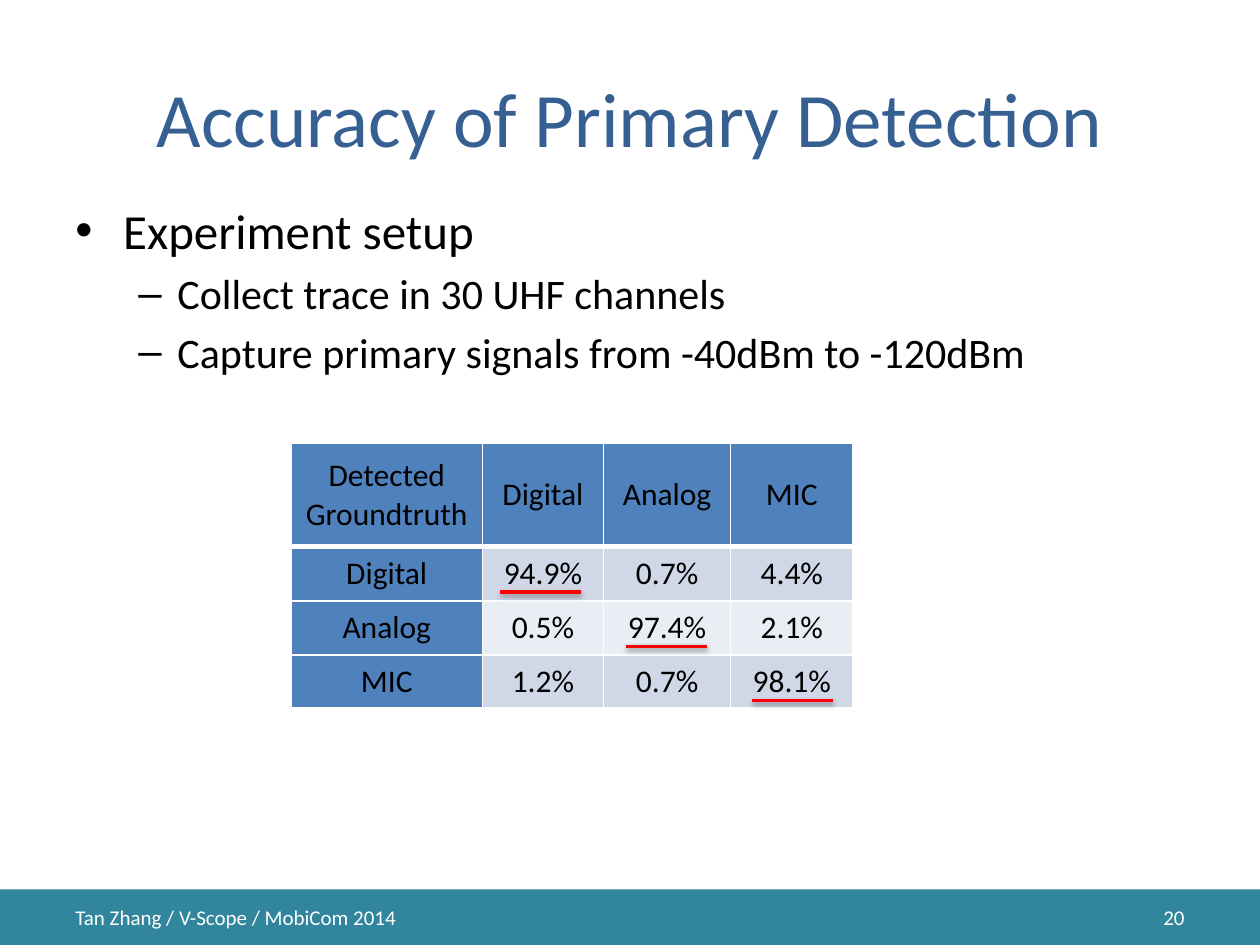
"""Build the slide on the accuracy of primary detection."""
from dataclasses import dataclass
from lxml.etree import SubElement
from pptx import Presentation
from pptx.dml.color import RGBColor
from pptx.enum.shapes import MSO_CONNECTOR, MSO_SHAPE
from pptx.enum.text import MSO_ANCHOR, PP_ALIGN
from pptx.oxml.ns import qn
from pptx.util import Inches, Pt


@dataclass(frozen=True)
class Theme:
    font: str = "Calibri"
    title: str = "376092"
    ink: str = "000000"
    white: str = "FFFFFF"
    bar: str = "31859C"
    head: str = "4F81BD"
    bands: tuple = ("D0D8E8", "E9EDF4")
    mark: str = "FF0000"
    big: int = 44
    main: int = 28
    sub: int = 24
    cell: int = 18
    small: int = 12


def add(parent, tag, **attrs):
    node = SubElement(parent, qn(tag))
    for name, value in attrs.items():
        node.set(name, str(value))
    return node


def paint(fill, color):
    fill.solid()
    fill.fore_color.rgb = RGBColor.from_string(color)


def cast(shape, alpha, dist):
    effects = add(shape._element.spPr, "a:effectLst")
    shadow = add(effects, "a:outerShdw", blurRad=Pt(3.1), dist=Pt(dist),
                 dir=5400000, rotWithShape=0)
    color = add(shadow, "a:srgbClr", val=Theme.ink)
    add(color, "a:alpha", val=alpha * 1000)


class Page:
    def __init__(self, slide, theme):
        self.slide, self.theme = slide, theme

    def style(self, para, size, color, align=PP_ALIGN.LEFT):
        para.alignment = align
        font = para.font
        font.name, font.size = self.theme.font, Pt(size)
        font.color.rgb = RGBColor.from_string(color)

    def frame(self, box, anchor):
        frame = self.slide.shapes.add_textbox(*map(Inches, box)).text_frame
        frame.word_wrap = True
        frame.vertical_anchor = anchor
        return frame

    def text(self, box, words, size, color, align=PP_ALIGN.LEFT):
        frame = self.frame(box, MSO_ANCHOR.MIDDLE)
        frame.text = words
        self.style(frame.paragraphs[0], size, color, align)

    def bullets(self, box, items):
        looks = (("•", 0.38, 0.38, self.theme.main),
                 ("–", 0.81, 0.31, self.theme.sub))
        frame = self.frame(box, MSO_ANCHOR.TOP)
        for i, (level, words) in enumerate(items):
            para = frame.add_paragraph() if i else frame.paragraphs[0]
            mark, left, hang, size = looks[level]
            para.text = words
            para.level = level
            if i:
                para.space_before = Pt(size * 0.2)
            props = para._p.get_or_add_pPr()
            props.set("marL", str(Inches(left)))
            props.set("indent", str(-Inches(hang)))
            add(props, "a:buFont", typeface="Arial")
            add(props, "a:buChar", char=mark)
            self.style(para, size, self.theme.ink)

    def bar(self, box):
        shape = self.slide.shapes.add_shape(MSO_SHAPE.RECTANGLE, *map(Inches, box))
        paint(shape.fill, self.theme.bar)
        shape.line.fill.background()
        cast(shape, 35, 1.8)

    def borders(self, cell, row):
        props = cell._tc.get_or_add_tcPr()
        widths = {"L": 1, "R": 1, "T": 3 if row == 1 else 1, "B": 1 if row else 3}
        for side, width in widths.items():
            line = add(props, f"a:ln{side}", w=Pt(width))
            add(add(line, "a:solidFill"), "a:srgbClr", val=self.theme.white)

    def table(self, box, data, cols, rows):
        theme = self.theme
        shape = self.slide.shapes.add_table(len(rows), len(cols), *map(Inches, box))
        table = shape.table
        for col, width in zip(table.columns, cols):
            col.width = Inches(width)
        for row, height in zip(table.rows, rows):
            row.height = Inches(height)
        for r, line in enumerate(data):
            for c, words in enumerate(line):
                cell = table.cell(r, c)
                cell.text = words
                cell.vertical_anchor = MSO_ANCHOR.MIDDLE
                cell.margin_left = cell.margin_right = Inches(0.05)
                cell.margin_top = cell.margin_bottom = Inches(0.02)
                self.borders(cell, r)
                body = r > 0 and c > 0
                paint(cell.fill, theme.bands[(r - 1) % 2] if body else theme.head)
                for para in cell.text_frame.paragraphs:
                    self.style(para, theme.cell, theme.ink, PP_ALIGN.CENTER)

    def rule(self, x, y, width):
        line = self.slide.shapes.add_connector(
            MSO_CONNECTOR.STRAIGHT, *map(Inches, (x, y, x + width, y)))
        line.line.color.rgb = RGBColor.from_string(self.theme.mark)
        line.line.width = Pt(2)
        cast(line, 38, 1.6)


def main():
    deck = Presentation()
    deck.slide_width, deck.slide_height = Inches(10), Inches(7.5)
    theme = Theme()
    page = Page(deck.slides.add_slide(deck.slide_layouts[6]), theme)
    page.bar((0, 7.06, 10.01, 0.46))
    page.text((0.5, 0.3, 9, 1.25), "Accuracy of Primary Detection",
              theme.big, theme.title, PP_ALIGN.CENTER)
    page.bullets((0.5, 1.54, 9.24, 4.95), (
        (0, "Experiment setup"),
        (1, "Collect trace in 30 UHF channels"),
        (1, "Capture primary signals from -40dBm to -120dBm")))
    page.text((7.17, 7.08, 2.33, 0.4), "20", theme.small, theme.white, PP_ALIGN.RIGHT)
    page.text((0.5, 7.08, 3.06, 0.4), "Tan Zhang / V-Scope / MobiCom 2014",
              theme.small, theme.white)
    data = (("Detected\nGroundtruth", "Digital", "Analog", "MIC"),
            ("Digital", "94.9%", "0.7%", "4.4%"),
            ("Analog", "0.5%", "97.4%", "2.1%"),
            ("MIC", "1.2%", "0.7%", "98.1%"))
    page.table((2.31, 3.52, 4.46, 2.1), data,
               (1.52, 0.96, 1.01, 0.97), (0.82, 0.43, 0.43, 0.42))
    for i in range(3):
        page.rule(3.97 + i, 4.7 + 0.43 * i, 0.64)
    deck.save("out.pptx")


if __name__ == "__main__":
    main()
